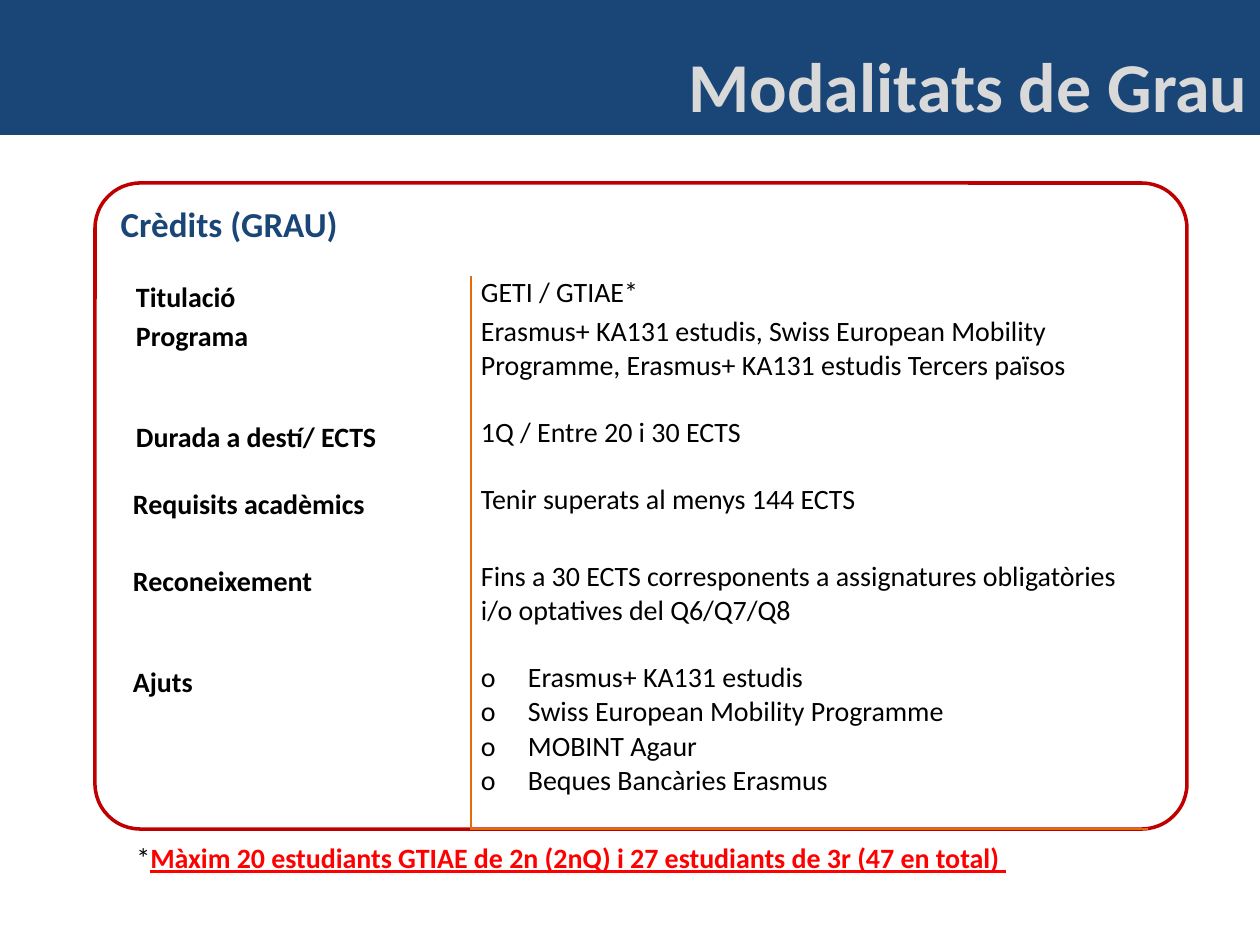
from dataclasses import dataclass

from lxml import etree
from pptx import Presentation, util as u
from pptx.dml.color import RGBColor
from pptx.enum import shapes, text
from pptx.oxml.ns import qn

EMU_PER_PX = 914400 / 126


@dataclass(frozen=True)
class Theme:
    font: str = "Calibri"
    navy: str = "1A4677"
    grey: str = "D9D9D9"
    white: str = "FFFFFF"
    black: str = "000000"
    crimson: str = "C00000"
    red: str = "FF0000"
    orange: str = "E36C0A"
    title: int = 40
    heading: int = 20
    body: int = 16
    spacer: int = 8


@dataclass(frozen=True)
class Frame:
    left: int
    top: int
    width: int
    height: int

    def emu(self) -> list[int]:
        return [px(n) for n in (self.left, self.top, self.width, self.height)]


@dataclass(frozen=True)
class Row:
    label: str
    lines: tuple[str, ...]
    height: int
    indent: int = 0
    bulleted: bool = False


THEME = Theme()
NO_STYLE = "{2D5ABB26-0587-4C30-8999-92F81FD0307C}"
TABLE_TOP = 239
STRIP_HEIGHTS = (23, 29, 47, 108, 121, 121)
HEADER_HEIGHT = 37
COLUMNS = (348, 677)
ROWS = (
    Row("Titulació", ("GETI / GTIAE*",), 39, 3),
    Row("Programa", ("Erasmus+ KA131 estudis, Swiss European Mobility Programme, "
                     "Erasmus+ KA131 estudis Tercers països",), 101, 3),
    Row("Durada a destí/ ECTS", ("1Q / Entre 20 i 30 ECTS",), 67, 3),
    Row("Requisits acadèmics", ("Tenir superats al menys 144 ECTS",), 77),
    Row("Reconeixement", ("Fins a 30 ECTS corresponents a assignatures obligatòries "
                          "i/o optatives del Q6/Q7/Q8",), 101),
    Row("Ajuts", ("Erasmus+ KA131 estudis", "Swiss European Mobility Programme",
                  "MOBINT Agaur", "Beques Bancàries Erasmus"), 168, bulleted=True),
)


def px(length: int) -> int:
    return round(length * EMU_PER_PX)


def apply(target, values: dict) -> None:
    for name, value in values.items():
        setattr(target, name, value)


def add_span(para, words: str, size: int, color: str, **styles) -> None:
    span = para.add_run()
    span.text = words
    apply(span.font, {"name": THEME.font, "size": u.Pt(size), **styles})
    span.font.color.rgb = RGBColor.from_string(color)


def set_fill(target, color: str) -> None:
    target.fill.solid()
    target.fill.fore_color.rgb = RGBColor.from_string(color)


def add_panel(page, kind, frame: Frame, fill: str, line: str):
    panel = page.shapes.add_shape(kind, *frame.emu())
    panel.shadow.inherit = False
    set_fill(panel, fill)
    panel.line.color.rgb = RGBColor.from_string(line)
    panel.line.width = u.Pt(2)
    return panel


def add_box(page, frame: Frame):
    box = page.shapes.add_textbox(*frame.emu())
    apply(box.text_frame, {"word_wrap": True,
                           "auto_size": text.MSO_AUTO_SIZE.SHAPE_TO_FIT_TEXT})
    return box.text_frame.paragraphs[0]


def set_indent(para, left: int, first: int = 0, bullet: str = "") -> None:
    props = para._p.get_or_add_pPr()
    props.set("marL", str(px(left)))
    props.set("indent", str(px(first)))
    if bullet:
        etree.SubElement(props, qn("a:buFont"), typeface=THEME.font)
        etree.SubElement(props, qn("a:buChar"), char=bullet)


def add_border(cell, side: str, color: str) -> None:
    props = cell._tc.get_or_add_tcPr()
    line = etree.SubElement(props, qn(f"a:ln{side}"), w=str(u.Pt(1)))
    fill = etree.SubElement(line, qn("a:solidFill"))
    etree.SubElement(fill, qn("a:srgbClr"), val=color)


def format_cell(cell, sides: str = "", color: str = THEME.orange, margin: int = 10) -> None:
    apply(cell, {"margin_left": px(margin), "margin_right": px(margin),
                 "margin_top": 0, "margin_bottom": 0})
    for side in sides:
        add_border(cell, side, color)
    cell.fill.background()


def add_plain_table(page, left: int, widths: tuple[int, ...], heights: tuple[int, ...]):
    frame = Frame(left, TABLE_TOP, sum(widths), sum(heights))
    table = page.shapes.add_table(len(heights), len(widths), *frame.emu()).table
    apply(table, {"first_row": False, "horz_banding": False})
    table._tbl.tblPr.find(qn("a:tableStyleId")).text = NO_STYLE
    for column, width in zip(table.columns, widths):
        column.width = px(width)
    for line, height in zip(table.rows, heights):
        line.height = px(height)
    return table


def add_strip_table(page) -> None:
    table = add_plain_table(page, 168, (20,), STRIP_HEIGHTS)
    for cell in table.iter_cells():
        format_cell(cell, "LRTB", THEME.white, 0)
        set_fill(cell, THEME.white)
        cell.text_frame.paragraphs[0].font.size = u.Pt(THEME.spacer)


def fill_row(label_cell, value_cell, row: Row, last: bool) -> None:
    format_cell(label_cell, "R")
    format_cell(value_cell, "LB" if last else "L")
    para = label_cell.text_frame.paragraphs[0]
    set_indent(para, row.indent)
    para.line_spacing = 1.15
    add_span(para, row.label, THEME.body, THEME.black, bold=True)
    frame = value_cell.text_frame
    for index, words in enumerate(row.lines):
        para = frame.add_paragraph() if index else frame.paragraphs[0]
        if row.bulleted:
            set_indent(para, 47, -47, "o")
        add_span(para, words, THEME.body, THEME.black, bold=False)


def add_credit_table(page) -> None:
    heights = (HEADER_HEIGHT, *(row.height for row in ROWS))
    table = add_plain_table(page, 123, COLUMNS, heights)
    # Empty row above the entries
    for cell in table.rows[0].cells:
        format_cell(cell)
        cell.text_frame.paragraphs[0].font.size = u.Pt(THEME.spacer)
    table.cell(0, 0).merge(table.cell(0, 1))
    # Label and value rows
    for index, row in enumerate(ROWS, start=1):
        fill_row(table.cell(index, 0), table.cell(index, 1), row, index == len(ROWS))


def main() -> None:
    deck = Presentation()
    apply(deck, {"slide_width": px(1260), "slide_height": px(945)})
    page = deck.slides.add_slide(deck.slide_layouts[6])

    # Title band
    add_panel(page, shapes.MSO_SHAPE.RECTANGLE, Frame(0, 0, 1260, 133),
              THEME.navy, THEME.navy)
    title = add_box(page, Frame(372, 36, 888, 97))
    title.alignment = text.PP_ALIGN.RIGHT
    add_span(title, "Modalitats de Grau", THEME.title, THEME.grey, bold=True)

    # Card with heading
    card = add_panel(page, shapes.MSO_SHAPE.ROUNDED_RECTANGLE,
                     Frame(95, 183, 1092, 646), THEME.white, THEME.crimson)
    card.adjustments[0] = 0.07
    card.text_frame.vertical_anchor = text.MSO_ANCHOR.TOP
    heading = card.text_frame.paragraphs[0]
    heading.alignment = text.PP_ALIGN.LEFT
    add_span(heading, "Crèdits (GRAU)", THEME.heading, THEME.navy, bold=True)

    # Narrow white table, then the credit table
    add_strip_table(page)
    add_credit_table(page)

    # Footnote
    note = add_box(page, Frame(124, 834, 994, 47))
    add_span(note, "*", THEME.body, THEME.black)
    add_span(note, "Màxim 20 estudiants GTIAE de 2n (2nQ) i 27 estudiants de 3r (47 en total) ",
             THEME.body, THEME.red, bold=True, underline=True)

    deck.save("out.pptx")


if __name__ == "__main__":
    main()
